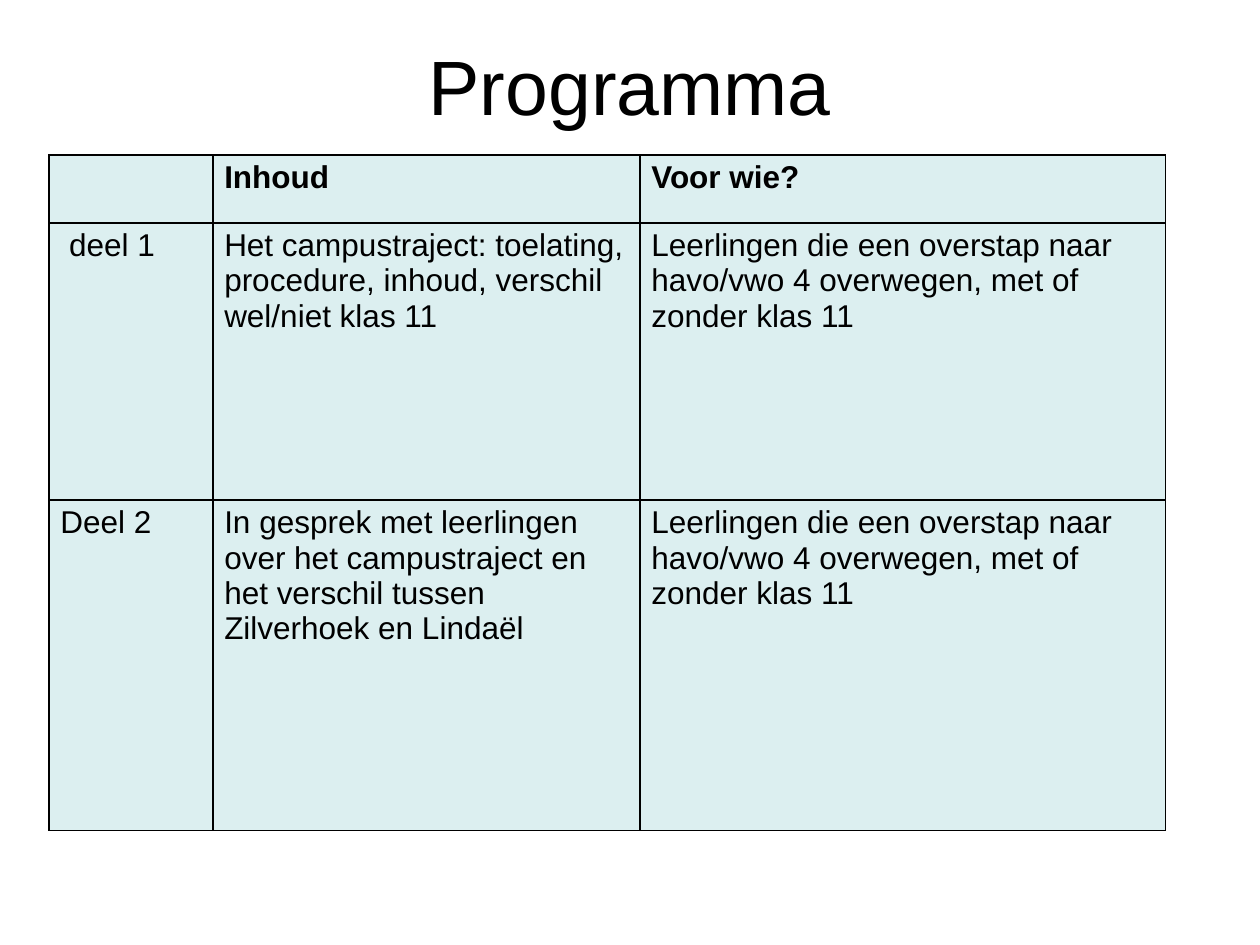
import pptx
import pptx.util
import pptx.dml.color
import pptx.enum.text
import pptx.oxml
import pptx.oxml.ns

Inches = pptx.util.Inches
COLORS = {"ink": "000000", "cell": "BBE0E3"}
TITLE = "Programma"
GROUP = "Leerlingen die een overstap naar havo/vwo 4 overwegen, met of zonder klas 11"
ROWS = [
    ("", "Inhoud", "Voor wie?"),
    (" deel 1", "Het campustraject: toelating, procedure, inhoud, verschil wel/niet klas 11", GROUP),
    ("Deel 2", "In gesprek met leerlingen over het campustraject en het verschil tussen Zilverhoek en Lindaël", GROUP),
]
WIDTHS = [1.3, 3.39, 4.17]
HEIGHTS = [0.54, 2.2, 2.62]
INSETS = {"margin_left": 0.09, "margin_right": 0.09, "margin_top": 0.04, "margin_bottom": 0.04}
NS = pptx.oxml.ns.nsdecls("a")


def color(name):
    return pptx.dml.color.RGBColor.from_string(COLORS[name])


def write(frame, text, size, bold=False):
    frame.word_wrap = True
    par = frame.paragraphs[0]
    run = par.add_run()
    run.text = text
    style = {"name": "Arial", "size": pptx.util.Pt(size), "bold": bold}
    for key, value in style.items():
        setattr(run.font, key, value)
    run.font.color.rgb = color("ink")
    return par


def paint(cell):
    cell.fill.solid()
    cell.fill.fore_color.rgb = color("cell")
    props = cell._tc.get_or_add_tcPr()
    tint = props.find(".//" + pptx.oxml.ns.qn("a:srgbClr"))
    tint.append(pptx.oxml.parse_xml(f'<a:alpha {NS} val="50000"/>'))
    for place, side in enumerate("LRTB"):
        line = (f'<a:ln{side} {NS} w="12700"><a:solidFill>'
                f'<a:srgbClr val="{COLORS["ink"]}"/></a:solidFill></a:ln{side}>')
        props.insert(place, pptx.oxml.parse_xml(line))


def main():
    deck = pptx.Presentation()
    deck.slide_width, deck.slide_height = Inches(10), Inches(7.5)
    slide = deck.slides.add_slide(deck.slide_layouts[6])

    box = [Inches(n) for n in (0.5, 0.05, 9, 1.25)]
    frame = slide.shapes.add_textbox(*box).text_frame
    frame.vertical_anchor = pptx.enum.text.MSO_ANCHOR.MIDDLE
    write(frame, TITLE, 44).alignment = pptx.enum.text.PP_ALIGN.CENTER

    area = [Inches(n) for n in (0.39, 1.23, sum(WIDTHS), sum(HEIGHTS))]
    table = slide.shapes.add_table(len(ROWS), len(WIDTHS), *area).table
    for col, width in zip(table.columns, WIDTHS):
        col.width = Inches(width)
    for row, height in zip(table.rows, HEIGHTS):
        row.height = Inches(height)
    for i, texts in enumerate(ROWS):
        for j, text in enumerate(texts):
            cell = table.cell(i, j)
            for key, value in INSETS.items():
                setattr(cell, key, Inches(value))
            paint(cell)
            if text:
                write(cell.text_frame, text, 18, i == 0)

    deck.save("out.pptx")


if __name__ == "__main__":
    main()
